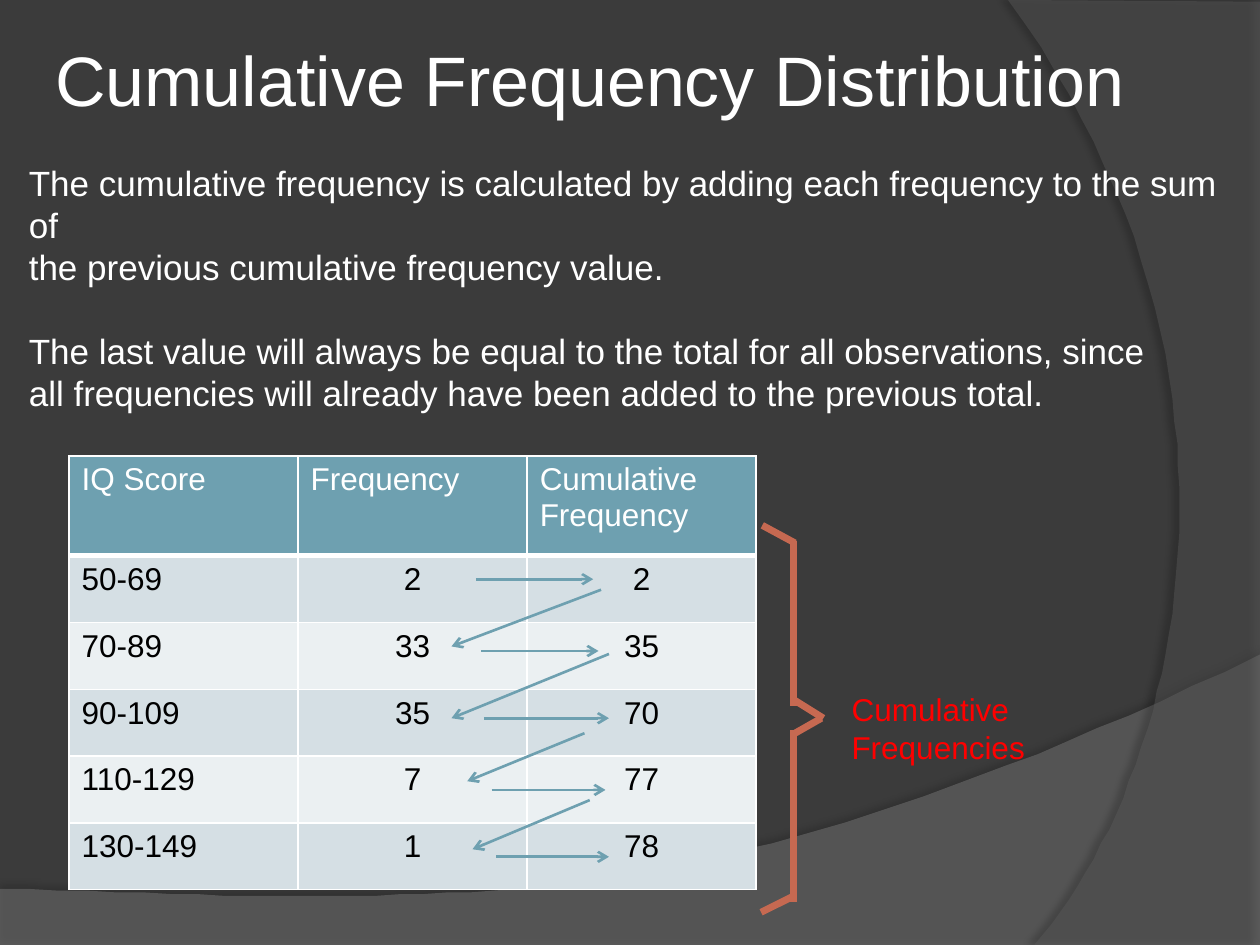
from lxml.etree import SubElement
from pptx import Presentation
from pptx.dml.color import RGBColor
from pptx.enum.shapes import MSO_CONNECTOR as Connector
from pptx.enum.text import PP_ALIGN as Align
from pptx.oxml.ns import qn
from pptx.util import Pt

THEME = {
    "font": "Arial", "background": "3B3B3B", "light": "FFFFFF", "dark": "000000",
    "label": "FF0000", "accent": "6EA0B0", "bracket": "C66951",
    "bands": ("D5DFE4", "EBF0F2"),
    "title_size": 40, "body_size": 20, "table_size": 18,
}
TITLE = "Cumulative Frequency Distribution"
BODY = [
    ("The cumulative frequency is calculated by adding each frequency to the sum of", 0),
    ("the previous cumulative frequency value.", 0),
    ("The last value will always be equal to the total for all observations, since", 24),
    ("all frequencies will already have been added to the previous total.", 0),
]
LABEL = "Cumulative Frequencies"
ROWS = [
    ("IQ Score", "Frequency", "Cumulative Frequency"),
    ("50-69", "2", "2"),
    ("70-89", "33", "35"),
    ("90-109", "35", "70"),
    ("110-129", "7", "77"),
    ("130-149", "1", "78"),
]
TABLE_BOX = (39.5, 260.6, 392.7, 247.8)
HEADER_HEIGHT = 57
ACROSS = [(272, 339, 331), (275, 342, 372), (276.5, 348, 410.4),
          (281, 346, 451.4), (283.5, 348, 489.6)]
BACK = [(343.5, 337, 258, 369.4), (348, 373.7, 258, 410.4),
        (334, 419, 267, 446.4), (337, 457.2, 270, 485.3)]
BRACKET = [
    (454.3, 400.3, 470.5, 410.4), (454.3, 419, 469.4, 410.4),
    (453.6, 403.2, 453.6, 308.9), (453.6, 515.5, 453.6, 416.9),
    (454.3, 310.3, 435.6, 300.2), (453.6, 512, 434.9, 521.3),
]
WAVES = [
    {"corners": [(0, 507.6), (0, 540.7), (720, 540.7)],
     "curve": [(720, 374.4), (402.5, 524.9), (281.5, 517.7), (0, 507.6)],
     "color": "7F7F7F", "opacity": 45, "shadow": (35, 4, 3.5, 270)},
    {"corners": [(720, 1.4), (720, 540)],
     "curve": [(591.1, 540), (673.2, 445.7), (733, 216), (576, 0)],
     "color": "5E5E5E", "opacity": 40, "shadow": (45, 4, 4, 180)},
]


def rgb(color):
    """Return a color object for a hex string."""
    return RGBColor.from_string(color)


def points(values):
    """Convert plain numbers to lengths."""
    return [Pt(value) for value in values]


def add_element(parent, tag, **attributes):
    """Append an XML element with the given attributes."""
    return SubElement(parent, qn(tag), {key: str(value) for key, value in attributes.items()})


def write(paragraph, text, *, size, color, align=Align.LEFT, before=0):
    """Put formatted text in a paragraph."""
    paragraph.alignment = align
    paragraph.space_before = Pt(before)
    run = paragraph.add_run()
    run.text = text
    run.font.name = THEME["font"]
    run.font.size = Pt(size)
    run.font.color.rgb = rgb(color)


def add_text(slide, box, lines, *, size, color, right=7.2):
    """Add a text box of (text, space before) lines."""
    frame = slide.shapes.add_textbox(*points(box)).text_frame
    frame.word_wrap = True
    frame.margin_right = Pt(right)
    for index, (text, before) in enumerate(lines):
        paragraph = frame.add_paragraph() if index else frame.paragraphs[0]
        write(paragraph, text, size=size, color=color, before=before)


def add_line(shapes, ends, *, color, width, arrow=False):
    """Add a straight line, optionally ending in an arrowhead."""
    line = shapes.add_connector(Connector.STRAIGHT, *points(ends))
    line.line.color.rgb = rgb(color)
    line.line.width = Pt(width)
    if arrow:
        add_element(line.line._get_or_add_ln(), "a:tailEnd", type="arrow")
    add_element(line._element.spPr, "a:effectLst")


def bezier(curve, steps=48):
    """Sample a cubic curve at equal parameter steps."""
    for step in range(steps + 1):
        t = step / steps
        weights = ((1 - t) ** 3, 3 * t * (1 - t) ** 2, 3 * t * t * (1 - t), t ** 3)
        yield tuple(sum(w * point[axis] for w, point in zip(weights, curve)) for axis in (0, 1))


def add_wave(slide, wave):
    """Add a translucent background sweep with its shadow."""
    outline = wave["corners"] + list(bezier(wave["curve"]))
    builder = slide.shapes.build_freeform(*outline[0], scale=Pt(1))
    builder.add_line_segments(outline[1:], close=True)
    shape = builder.convert_to_shape()
    shape.line.fill.background()
    shape.fill.solid()
    shape.fill.fore_color.rgb = rgb(wave["color"])
    fill_color = shape._element.spPr.find(qn("a:solidFill"))[0]
    add_element(fill_color, "a:alpha", val=wave["opacity"] * 1000)
    shape.shadow.inherit = False
    opacity, blur, distance, angle = wave["shadow"]
    shadow = add_element(shape._element.spPr.find(qn("a:effectLst")), "a:outerShdw",
                         blurRad=Pt(blur), dist=Pt(distance), dir=angle * 60000,
                         algn="ctr", rotWithShape=0)
    shadow_color = add_element(shadow, "a:srgbClr", val=THEME["dark"])
    add_element(shadow_color, "a:alpha", val=opacity * 1000)


def format_cell(cell, fill, header):
    """Set the borders and fill of a table cell."""
    properties = cell._tc.get_or_add_tcPr()
    for side in "LRTB":
        width = 3 if header and side == "B" else 1
        border = add_element(properties, f"a:ln{side}", w=Pt(width))
        add_element(add_element(border, "a:solidFill"), "a:srgbClr", val=THEME["light"])
    cell.fill.solid()
    cell.fill.fore_color.rgb = rgb(fill)


def add_frequency_table(slide):
    """Add the table of scores and frequencies."""
    table = slide.shapes.add_table(len(ROWS), len(ROWS[0]), *points(TABLE_BOX)).table
    for column in table.columns:
        column.width = Pt(TABLE_BOX[2] / len(ROWS[0]))
    row_height = (TABLE_BOX[3] - HEADER_HEIGHT) / (len(ROWS) - 1)
    for row_index, values in enumerate(ROWS):
        header = row_index == 0
        table.rows[row_index].height = Pt(HEADER_HEIGHT if header else row_height)
        fill = THEME["accent"] if header else THEME["bands"][(row_index - 1) % 2]
        for column_index, text in enumerate(values):
            cell = table.cell(row_index, column_index)
            format_cell(cell, fill, header)
            write(cell.text_frame.paragraphs[0], text, size=THEME["table_size"],
                  color=THEME["light" if header else "dark"],
                  align=Align.LEFT if header or column_index == 0 else Align.CENTER)


def main():
    """Build and save the slide."""
    presentation = Presentation()
    presentation.slide_width, presentation.slide_height = Pt(720), Pt(540)
    slide = presentation.slides.add_slide(presentation.slide_layouts[6])
    slide.background.fill.solid()
    slide.background.fill.fore_color.rgb = rgb(THEME["background"])
    for wave in WAVES:
        add_wave(slide, wave)
    add_text(slide, (24.5, 17.3, 679.7, 55.4), [(TITLE, 0)],
             size=THEME["title_size"], color=THEME["light"])
    add_text(slide, (479.5, 391, 207.4, 41.8), [(LABEL, 0)],
             size=THEME["table_size"], color=THEME["label"], right=60)
    bracket = slide.shapes.add_group_shape()
    for ends in BRACKET:
        add_line(bracket.shapes, ends, color=THEME["bracket"], width=4)
    add_frequency_table(slide)
    for ends in [(left, y, right, y) for left, right, y in ACROSS] + BACK:
        add_line(slide.shapes, ends, color=THEME["accent"], width=1.5, arrow=True)
    add_text(slide, (9.4, 88.6, 696.2, 128.2), BODY,
             size=THEME["body_size"], color=THEME["light"])
    presentation.save("out.pptx")


if __name__ == "__main__":
    main()
